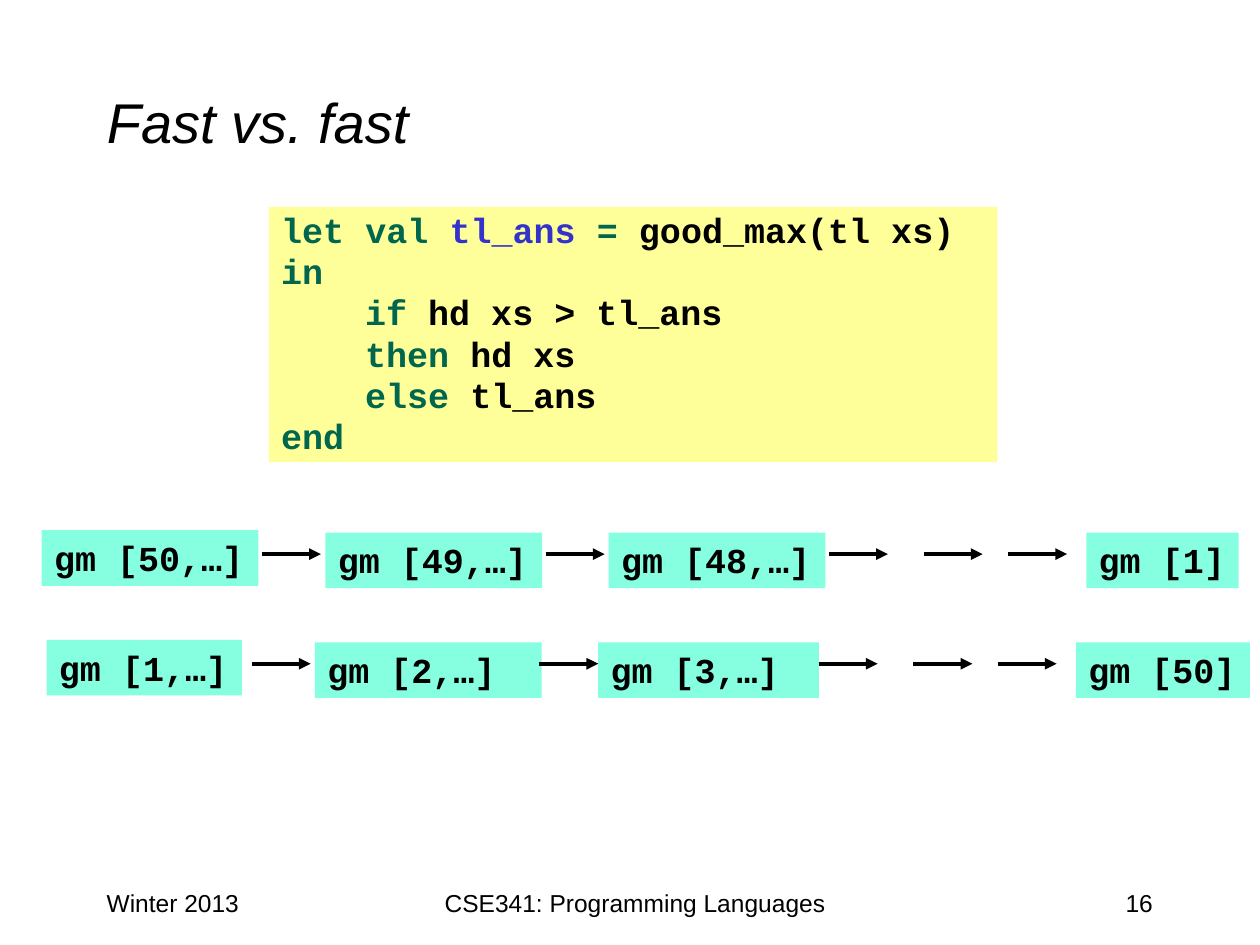
import dataclasses

import lxml.etree
import pptx
import pptx.dml.color
import pptx.enum.shapes
import pptx.enum.text
import pptx.oxml.ns
import pptx.util

Cm = pptx.util.Cm
Pt = pptx.util.Pt
qn = pptx.oxml.ns.qn
ALIGN = pptx.enum.text.PP_ALIGN
ANCHOR = pptx.enum.text.MSO_ANCHOR
AUTO = pptx.enum.text.MSO_AUTO_SIZE


@dataclasses.dataclass(frozen=True)
class Theme:
    text: str = "000000"
    keyword: str = "00664D"
    binding: str = "3333CC"
    code_fill: str = "FFFF99"
    call_fill: str = "85FFE0"
    sans: str = "Arial"
    mono: str = "Courier New"
    title_size: float = 32
    code_size: float = 20
    footer_size: float = 14
    arrow_width: float = 2.25


THEME = Theme()

K, B, T = THEME.keyword, THEME.binding, THEME.text
# Each line: indent level, then coloured pieces
CODE = [
    (0, [("let val ", K), ("tl_ans ", B), ("= ", K), ("good_max(tl xs)", T)]),
    (0, [("in", K)]),
    (1, [("if ", K), ("hd xs > tl_ans", T)]),
    (1, [("then ", K), ("hd xs", T)]),
    (1, [("else ", K), ("tl_ans", T)]),
    (0, [("end", K)]),
]
CODE_INDENT = Cm(1.69)  # four characters

# Calls: text, left offset in the row, width, all in cm; arrows: left offsets
DESCENDING = (
    [("gm [50,…]", 0, 4.37), ("gm [49,…]", 5.72, 4.37),
     ("gm [48,…]", 11.43, 4.37), ("gm [1]", 21.06, 3.07)],
    [4.44, 10.16, 15.87, 17.78, 19.48],
)
ASCENDING = (
    [("gm [1,…]", 0.31, 3.94), ("gm [2,…]", 5.72, 4.57),
     ("gm [3,…]", 11.43, 4.45), ("gm [50]", 21.06, 3.51)],
    [4.44, 10.24, 15.87, 17.78, 19.48],
)
CALL_HEIGHT = 1.12
FIRST_CALL_RISE = 0.05
ARROW_DROP = 0.43
ARROW_LENGTH = 1.19


def rgb(color):
    return pptx.dml.color.RGBColor.from_string(color)


def style(r, font, size, color=THEME.text, bold=False, italic=False):
    r.font.name = font
    r.font.size = Pt(size)
    r.font.color.rgb = rgb(color)
    r.font.bold = bold
    r.font.italic = italic


def add_panel(slide, x, y, w, h, fill):
    """Plain filled rectangle; returns its text frame."""
    sp = slide.shapes.add_shape(
        pptx.enum.shapes.MSO_SHAPE.RECTANGLE, Cm(x), Cm(y), Cm(w), Cm(h))
    sp.shadow.inherit = False
    sp.fill.solid()
    sp.fill.fore_color.rgb = rgb(fill)
    sp.line.fill.background()
    sp.text_frame.vertical_anchor = ANCHOR.TOP
    return sp.text_frame


def add_arrow(slide, x, y):
    c = slide.shapes.add_connector(
        pptx.enum.shapes.MSO_CONNECTOR.STRAIGHT,
        Cm(x), Cm(y), Cm(x + ARROW_LENGTH), Cm(y))
    c.line.color.rgb = rgb(THEME.text)
    c.line.width = Pt(THEME.arrow_width)
    lxml.etree.SubElement(c.line._get_or_add_ln(), qn("a:tailEnd"),
                          type="triangle")
    lxml.etree.SubElement(c._element.spPr, qn("a:effectLst"))


def add_title(slide, x, y, w, h):
    sp = slide.shapes.title
    sp.left, sp.top, sp.width, sp.height = Cm(x), Cm(y), Cm(w), Cm(h)
    tf = sp.text_frame
    tf.text = "Fast vs. fast"
    tf.auto_size = AUTO.NONE
    tf.vertical_anchor = ANCHOR.MIDDLE
    p = tf.paragraphs[0]
    p.alignment = ALIGN.LEFT
    style(p.runs[0], THEME.sans, THEME.title_size, italic=True)


def add_code(slide, x, y, w, h):
    tf = add_panel(slide, x, y, w, h, THEME.code_fill)
    for i, (level, pieces) in enumerate(CODE):
        p = tf.add_paragraph() if i else tf.paragraphs[0]
        p.alignment = ALIGN.LEFT
        p.line_spacing = 0.9
        p.space_before = Pt(2)
        p._p.get_or_add_pPr().set("marL", str(level * CODE_INDENT))
        for text, color in pieces:
            r = p.add_run()
            r.text = text
            style(r, THEME.mono, THEME.code_size, color, bold=True)


def add_call_chain(slide, x, y, calls, arrows):
    """Row of recursive calls joined by arrows."""
    for i, (text, dx, w) in enumerate(calls):
        top = y if i else y - FIRST_CALL_RISE
        tf = add_panel(slide, x + dx, top, w, CALL_HEIGHT, THEME.call_fill)
        tf.text = text
        tf.word_wrap = True
        p = tf.paragraphs[0]
        p.alignment = ALIGN.LEFT
        style(p.runs[0], THEME.mono, THEME.code_size, bold=True)
    for dx in arrows:
        add_arrow(slide, x + dx, y + ARROW_DROP)


def add_footer(slide, x, y, w, h):
    side = 5.29
    parts = [
        ("Winter 2013", 0, side, ALIGN.LEFT),
        ("CSE341: Programming Languages", 6.14, 9.53, ALIGN.CENTER),
        ("16", w - side, side, ALIGN.RIGHT),
    ]
    for text, dx, width, align in parts:
        sp = slide.shapes.add_textbox(Cm(x + dx), Cm(y), Cm(width), Cm(h))
        tf = sp.text_frame
        tf.text = text
        tf.word_wrap = True
        p = tf.paragraphs[0]
        p.alignment = align
        style(p.runs[0], THEME.sans, THEME.footer_size)


def main():
    prs = pptx.Presentation()
    prs.slide_width, prs.slide_height = Cm(25.4), Cm(19.05)
    slide = prs.slides.add_slide(prs.slide_layouts[5])
    add_title(slide, 1.9, 0.85, 21.59, 3.18)
    add_code(slide, 5.42, 4.17, 14.69, 5.15)
    add_call_chain(slide, 0.84, 10.74, *DESCENDING)
    add_call_chain(slide, 0.63, 12.95, *ASCENDING)
    add_footer(slide, 1.9, 17.78, 21.59, 1.27)
    prs.save("out.pptx")


if __name__ == "__main__":
    main()
